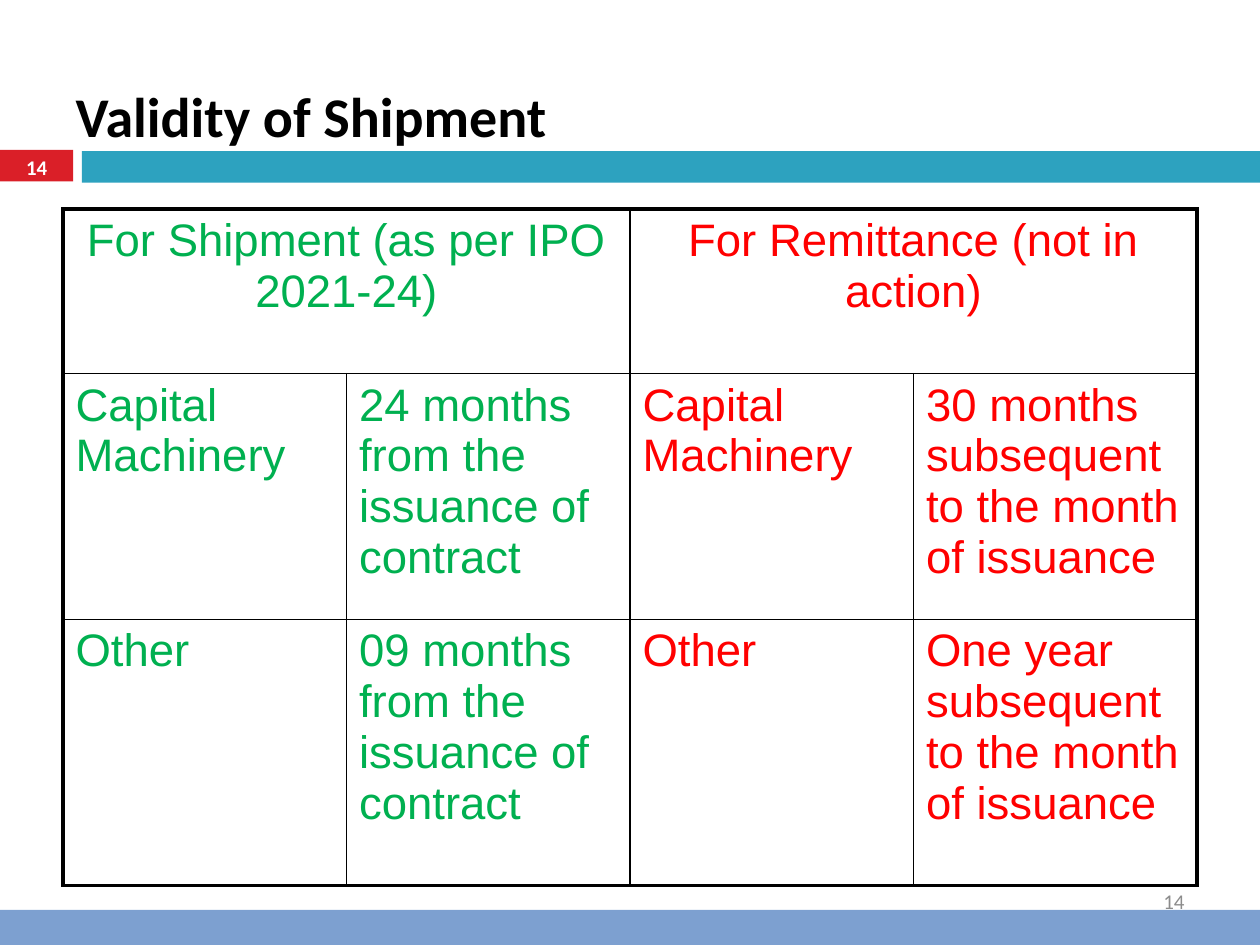
"""Build the slide on validity of shipment."""
from dataclasses import dataclass

from lxml import etree
from pptx import Presentation
from pptx.dml.color import RGBColor
from pptx.enum.shapes import MSO_SHAPE
from pptx.enum.text import MSO_ANCHOR, PP_ALIGN
from pptx.oxml.ns import qn
from pptx.util import Pt

RECTANGLE = MSO_SHAPE.RECTANGLE
TOP, MIDDLE, BOTTOM = MSO_ANCHOR.TOP, MSO_ANCHOR.MIDDLE, MSO_ANCHOR.BOTTOM
LEFT, CENTER, RIGHT = PP_ALIGN.LEFT, PP_ALIGN.CENTER, PP_ALIGN.RIGHT
TITLE_ONLY = 5


@dataclass(frozen=True)
class Theme:
    """Colours, fonts and type sizes of the slide."""
    ink: str = "000000"
    white: str = "FFFFFF"
    gray: str = "8C8C8C"
    red_tab: str = "DA1F28"
    teal: str = "2DA2BF"
    footer_blue: str = "7DA0D0"
    shipment: str = "00B050"
    remittance: str = "FF0000"
    heading_font: str = "Calibri"
    table_font: str = "Arial"
    title_size: float = 32
    table_size: float = 26
    tab_size: float = 11.9
    footer_size: float = 12
    outer_line: float = 2.25
    inner_line: float = 1


THEME = Theme()
PAGE_NUMBER = "14"
HEADINGS = ("For Shipment (as per IPO 2021-24)", "For Remittance (not in action)")
TERMS = (
    ("Capital Machinery", "24 months from the issuance of contract",
     "Capital Machinery", "30 months subsequent to the month of issuance"),
    ("Other", "09 months from the issuance of contract",
     "Other", "One year subsequent to the month of issuance"),
)
BARS = (
    ((0, 85.7, 41.8, 18), THEME.red_tab),
    ((46.8, 86.4, 673.2, 18), THEME.teal),
    ((0, 520, 720, 20), THEME.footer_blue),
)
TABLE_BOX = (36, 119.5, 648, 386.5)
ROW_HEIGHTS = (94, 140.5, 152)


def points(box):
    """Convert a box of point values to lengths."""
    return [Pt(value) for value in box]


def apply_format(target, values):
    """Set every attribute named in a dict of format values."""
    for name, value in values.items():
        setattr(target, name, value)


def write_text(frame, text, color, size, font, align=LEFT, bold=False):
    """Write one formatted paragraph into a text frame."""
    frame.word_wrap = True
    paragraph = frame.paragraphs[0]
    paragraph.alignment = align
    run = paragraph.add_run()
    run.text = text
    apply_format(run.font, {"name": font, "size": Pt(size), "bold": bold})
    run.font.color.rgb = RGBColor.from_string(color)


def add_bar(slide, box, color):
    """Add a plain filled bar."""
    bar = slide.shapes.add_shape(RECTANGLE, *points(box))
    bar.shadow.inherit = False
    bar.fill.solid()
    bar.fill.fore_color.rgb = RGBColor.from_string(color)
    bar.line.fill.background()


def add_title(slide, text):
    """Place and format the slide title."""
    title = slide.shapes.title
    left, top, width, height = points((36, 62.6, 648, 24.5))
    apply_format(title, {"left": left, "top": top, "width": width, "height": height})
    apply_format(title.text_frame, {"vertical_anchor": BOTTOM, "margin_top": 0,
                                    "margin_bottom": Pt(2)})
    write_text(title.text_frame, text, THEME.ink, THEME.title_size,
               THEME.heading_font, bold=True)


def add_page_number(slide, box, color, size, align, bold=False):
    """Add the page number in a text box."""
    frame = slide.shapes.add_textbox(*points(box)).text_frame
    frame.vertical_anchor = MIDDLE
    write_text(frame, PAGE_NUMBER, color, size, THEME.heading_font, align, bold)


def set_borders(cell, outer_edges):
    """Draw all four cell borders, heavier on the outer edges."""
    properties = cell._tc.get_or_add_tcPr()
    for edge in "LRTB":
        width = THEME.outer_line if edge in outer_edges else THEME.inner_line
        line = etree.SubElement(properties, qn(f"a:ln{edge}"), w=str(Pt(width)))
        fill = etree.SubElement(line, qn("a:solidFill"))
        etree.SubElement(fill, qn("a:srgbClr"), val=THEME.ink)


def outer_edges_of(row, column):
    """Name the sides of a cell that lie on the table outline."""
    is_heading = row == 0
    sides = {"L": column == 0, "R": column + is_heading >= 3,
             "T": is_heading, "B": row == len(TERMS)}
    return [edge for edge, is_outer in sides.items() if is_outer]


def fill_cell(cell, text, column, align=LEFT):
    """Write a cell in the colour of its half of the table."""
    color = THEME.shipment if column < 2 else THEME.remittance
    cell.vertical_anchor = TOP
    write_text(cell.text_frame, text, color, THEME.table_size,
               THEME.table_font, align)


def add_validity_table(slide):
    """Add the table of shipment and remittance terms."""
    table = slide.shapes.add_table(3, 4, *points(TABLE_BOX)).table
    apply_format(table, {"first_row": False, "horz_banding": False})
    for row, height in enumerate(ROW_HEIGHTS):
        table.rows[row].height = Pt(height)
        for column in range(4):
            cell = table.cell(row, column)
            set_borders(cell, outer_edges_of(row, column))
            cell.fill.background()
    for half, heading in enumerate(HEADINGS):
        column = 2 * half
        table.cell(0, column).merge(table.cell(0, column + 1))
        fill_cell(table.cell(0, column), heading, column, CENTER)
    for row, terms in enumerate(TERMS, start=1):
        for column, term in enumerate(terms):
            fill_cell(table.cell(row, column), term, column)


def main():
    """Build and save the slide."""
    deck = Presentation()
    deck.slide_width, deck.slide_height = Pt(720), Pt(540)
    slide = deck.slides.add_slide(deck.slide_layouts[TITLE_ONLY])
    for box, color in BARS:
        add_bar(slide, box, color)
    add_page_number(slide, (0, 85.7, 41.8, 19.4), THEME.white, THEME.tab_size,
                    CENTER, bold=True)
    add_title(slide, "Validity of Shipment")
    add_validity_table(slide)
    add_page_number(slide, (516, 500.5, 168, 28.8), THEME.gray,
                    THEME.footer_size, RIGHT)
    deck.save("out.pptx")


if __name__ == "__main__":
    main()
